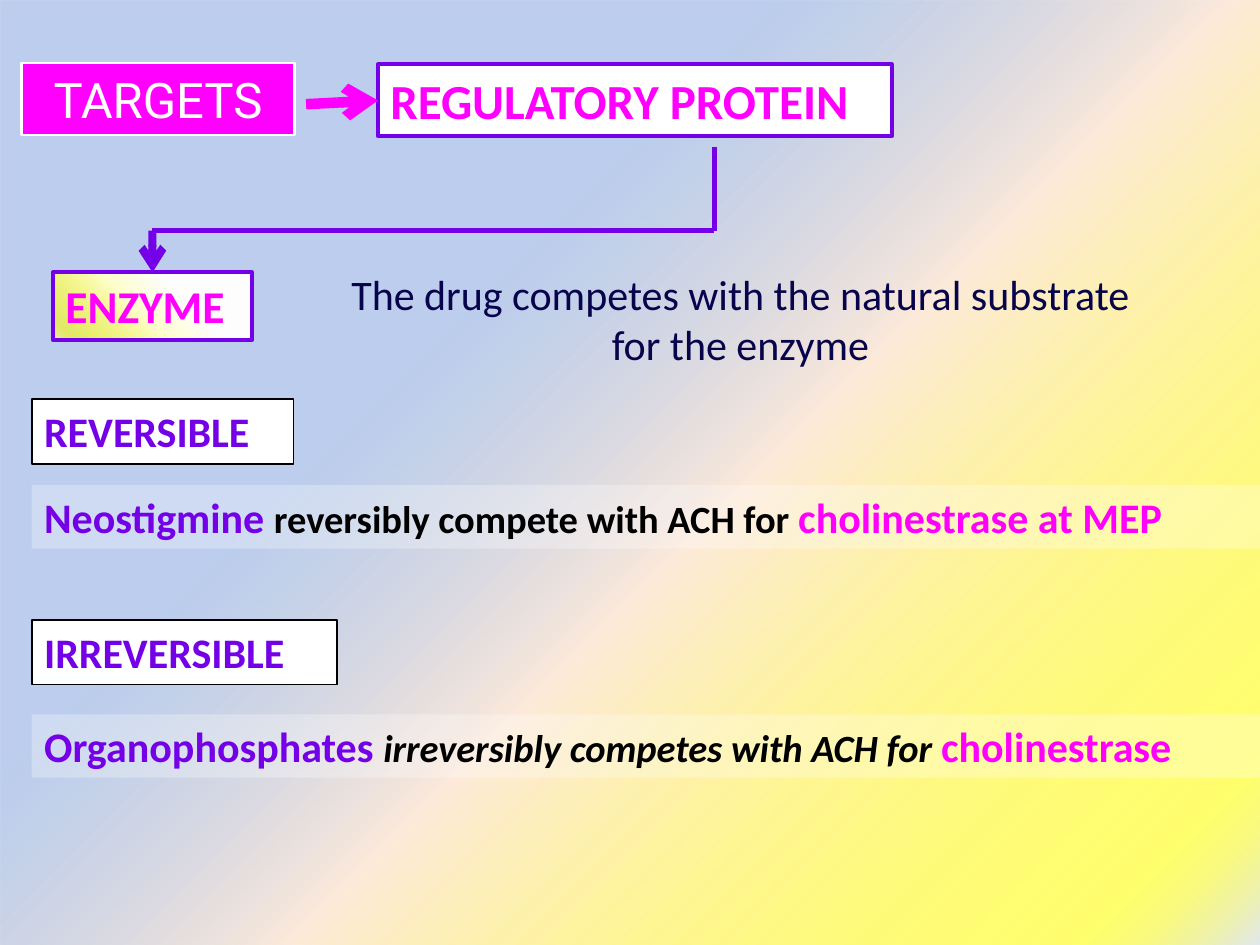
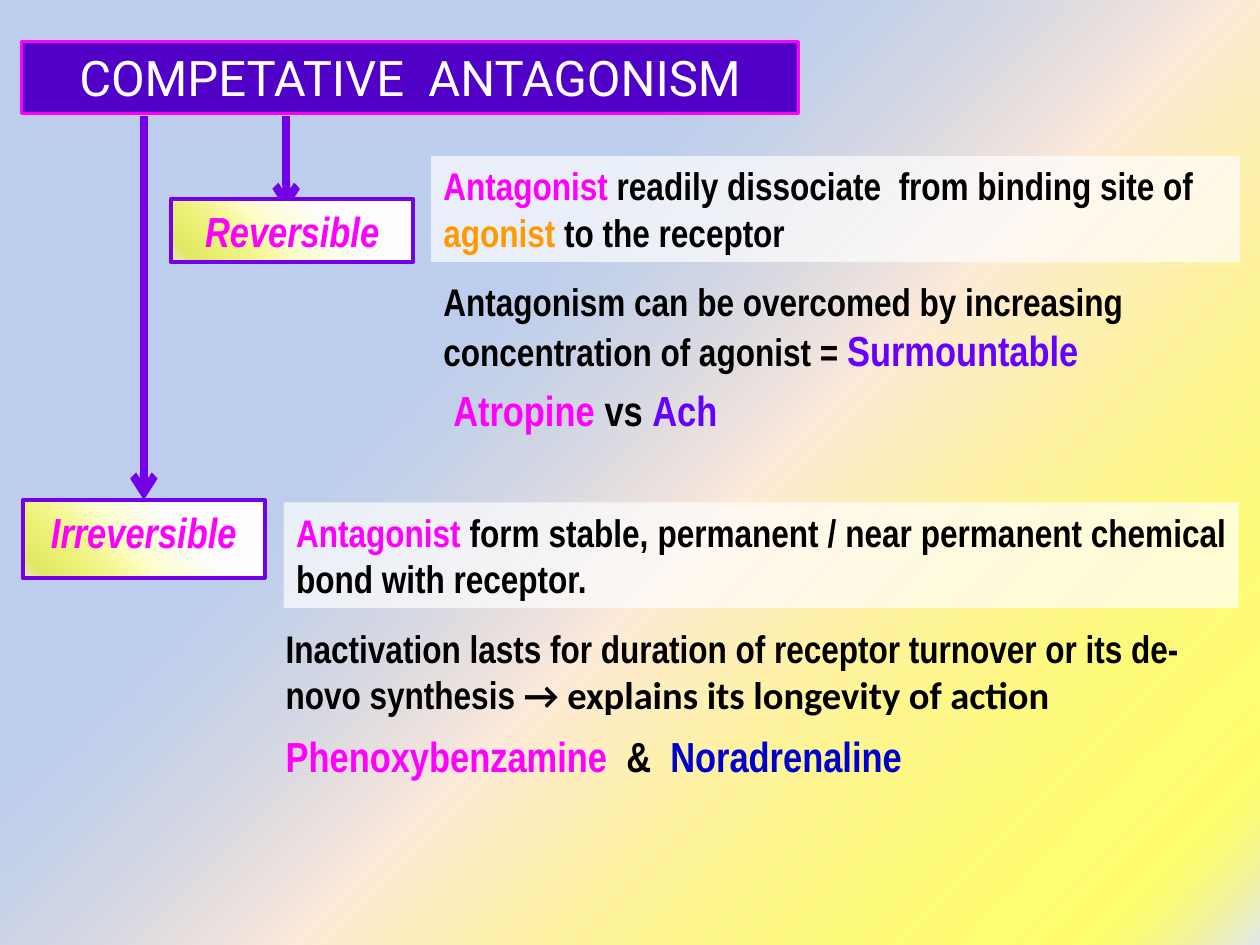
from dataclasses import dataclass
from typing import NamedTuple, Optional

from lxml import etree
from pptx import Presentation
from pptx.dml.color import RGBColor
from pptx.enum.shapes import MSO_CONNECTOR, MSO_SHAPE
from pptx.enum.text import MSO_ANCHOR, MSO_AUTO_SIZE, PP_ALIGN
from pptx.oxml.ns import qn
from pptx.util import Cm, Pt

RECT = MSO_SHAPE.RECTANGLE
STRAIGHT = MSO_CONNECTOR.STRAIGHT
TOP = MSO_ANCHOR.TOP
GROW = MSO_AUTO_SIZE.SHAPE_TO_FIT_TEXT
LEFT, CENTER, JUSTIFY = PP_ALIGN.LEFT, PP_ALIGN.CENTER, PP_ALIGN.JUSTIFY
TOP_SIDE, LEFT_SIDE = 0, 1

# Shared colours and fonts
PINK, VIOLET, INDIGO = "FF00FF", "7300E6", "6600FF"
WHITE, BLACK = "FFFFFF", "000000"
SANS, NARROW, TITLE = "Calibri", "Arial Narrow", "Roboto"
WIDE, HIGH = 25.4, 19.05


class Stop(NamedTuple):
    pos: int
    color: str
    alpha: int = 100


class Fade(NamedTuple):
    stops: list[Stop]
    angle: int


class Run(NamedTuple):
    text: str
    color: str = BLACK
    size: Optional[int] = None
    font: Optional[str] = None
    italic: bool = False


@dataclass(frozen=True)
class Look:
    fill: Optional[str] = None
    alpha: int = 100
    fade: Optional[Fade] = None
    line: Optional[str] = None
    weight: float = 0


@dataclass(frozen=True)
class Type:
    font: str
    size: int
    bold: bool = True
    italic: bool = False
    align: PP_ALIGN = LEFT


class Box(NamedTuple):
    left: float
    top: float
    width: float
    height: float
    look: Look
    type: Type
    paras: list[list[Run]]
    wrap: bool = True


TAIL = [Stop(92, "FFFF00", 56), Stop(100, "E1E8F5")]
SKY = Fade([Stop(35, "9AB5E4", 66), Stop(56, "FDEADA"), *TAIL], 45)
GLOW = Fade([Stop(35, WHITE), Stop(57, "FFFFCC"), *TAIL], 135)

# Looks of the boxes
PLAIN = Look()
LABEL = Look(fade=GLOW, line=VIOLET, weight=2.25)
CARD = Look(fill=WHITE, line=BLACK, weight=1)
BAND = Look(fill=WHITE, alpha=29)
PANEL = Look(fill=WHITE, alpha=68)

# Type styles
HEAD = Type(TITLE, 28, bold=False, align=CENTER)
KIND = Type(SANS, 24)
TAG = Type(NARROW, 24, italic=True, align=CENTER)
BODY = Type(NARROW, 22)
PAIR = Type(NARROW, 24)


def rgb(color: str) -> RGBColor:
    return RGBColor.from_string(color)


def add_alpha(node, alpha: int) -> None:
    if alpha < 100:
        etree.SubElement(node, qn("a:alpha"), val=str(alpha * 1000))


def set_fade(shape, fade: Fade) -> None:
    """Replace the empty fill with a linear gradient."""
    shape.fill.background()
    grad = etree.Element(qn("a:gradFill"), rotWithShape="1")
    stops = etree.SubElement(grad, qn("a:gsLst"))
    for stop in fade.stops:
        node = etree.SubElement(stops, qn("a:gs"), pos=str(stop.pos * 1000))
        tint = etree.SubElement(node, qn("a:srgbClr"), val=stop.color)
        add_alpha(tint, stop.alpha)
    etree.SubElement(grad, qn("a:lin"), ang=str(fade.angle * 60000), scaled="0")
    props = shape.element.spPr
    props.replace(props.find(qn("a:noFill")), grad)


def set_look(shape, look: Look) -> None:
    shape.shadow.inherit = False
    if look.fade:
        set_fade(shape, look.fade)
    else:
        shape.fill.solid()
        shape.fill.fore_color.rgb = rgb(look.fill)
        fill = shape.element.spPr.find(qn("a:solidFill"))
        add_alpha(fill[0], look.alpha)
    if look.line:
        shape.line.color.rgb = rgb(look.line)
        shape.line.width = Pt(look.weight)
    else:
        shape.line.fill.background()


def set_para(para, kind: Type, runs: list[Run]) -> None:
    """Put what the runs share on the paragraph, the rest on each run."""
    para.alignment = kind.align
    para.font.name = kind.font
    para.font.size = Pt(kind.size)
    para.font.bold = kind.bold
    para.font.italic = kind.italic
    same = len({run.color for run in runs}) == 1
    if same:
        para.font.color.rgb = rgb(runs[0].color)
    for run in runs:
        part = para.add_run()
        part.text = run.text
        if not same:
            part.font.color.rgb = rgb(run.color)
        if run.size:
            part.font.size = Pt(run.size)
        if run.font:
            part.font.name = run.font
        if run.italic:
            part.font.italic = True


def add_box(slide, box: Box):
    area = [Cm(box.left), Cm(box.top), Cm(box.width), Cm(box.height)]
    if box.look is PLAIN:
        shape = slide.shapes.add_textbox(*area)
    else:
        shape = slide.shapes.add_shape(RECT, *area)
        set_look(shape, box.look)
    frame = shape.text_frame
    frame.word_wrap = box.wrap
    frame.auto_size = GROW
    frame.vertical_anchor = TOP
    for spot, runs in enumerate(box.paras):
        para = frame.add_paragraph() if spot else frame.paragraphs[0]
        set_para(para, box.type, runs)
    return shape


def add_line(slide, start: tuple[float, float], end: tuple[float, float],
             weight: float, color: str = VIOLET, arrow: bool = False):
    line = slide.shapes.add_connector(
        STRAIGHT, *(Cm(value) for value in (*start, *end)))
    line.line.color.rgb = rgb(color)
    line.line.width = Pt(weight)
    props = line.element.spPr
    if arrow:
        etree.SubElement(props.find(qn("a:ln")), qn("a:tailEnd"), type="arrow")
    etree.SubElement(props, qn("a:effectLst"))
    return line


def add_slide(deck):
    """Blank slide under the shared gradient."""
    slide = deck.slides.add_slide(deck.slide_layouts[6])
    sky = slide.shapes.add_shape(RECT, 0, 0, Cm(WIDE), Cm(HIGH))
    set_look(sky, Look(fade=SKY))
    return slide


def draw_targets(deck) -> None:
    slide = add_slide(deck)

    # Heading boxes and the arrow between them
    add_box(slide, Box(0.43, 1.27, 5.51, 1.45,
                       Look(fill=PINK, line=WHITE, weight=1.5), HEAD,
                       [[Run("TARGETS", WHITE)]]))
    protein = add_box(slide, Box(7.62, 1.3, 10.36, 1.45,
                                 Look(fill=WHITE, line=VIOLET, weight=2.25),
                                 Type(SANS, 28),
                                 [[Run("REGULATORY PROTEIN", PINK)]]))
    link = add_line(slide, (6.17, 2.1), (7.62, 2.03), 6, PINK, True)
    link.end_connect(protein, LEFT_SIDE)

    # Path down to the enzyme
    enzyme = add_box(slide, Box(1.07, 5.49, 4.01, 1.37, LABEL, Type(SANS, 26),
                                [[Run("ENZYME", PINK)]]))
    near, far, bend = 3.07, 14.4, 4.65
    add_line(slide, (far, 2.97), (far, bend), 3)
    add_line(slide, (near, bend), (far, bend), 3)
    drop = add_line(slide, (near, bend), (near, 5.49), 4.5, arrow=True)
    drop.end_connect(enzyme, TOP_SIDE)
    navy = "07044C"
    add_box(slide, Box(5.92, 5.28, 18.21, 2.31, PLAIN,
                       Type(SANS, 24, bold=False, align=CENTER),
                       [[Run("The drug competes with the natural substrate ", navy)],
                        [Run("for the enzyme ", navy)]]))

    # Two kinds of competition, each with an example
    left = 0.64
    for top, width, name, low, runs in (
        (8.05, 5.28, "REVERSIBLE", 9.78,
         [Run("Neostigmine ", VIOLET),
          Run("reversibly compete with ACH for ", size=22),
          Run("cholinestrase at MEP", PINK)]),
        (12.5, 6.15, "IRREVERSIBLE", 14.4,
         [Run("Organophosphates ", VIOLET),
          Run("irreversibly competes with ACH for ", size=22, italic=True),
          Run("cholinestrase", PINK)]),
    ):
        add_box(slide, Box(left, top, width, 1.3, CARD, KIND,
                           [[Run(name, VIOLET)]]))
        add_box(slide, Box(left, low, WIDE - left, 1.28, BAND, KIND, [runs]))


def draw_rivals(deck) -> None:
    slide = add_slide(deck)

    # Title and the arrows below it
    base = 2.34
    add_line(slide, (5.77, base), (5.77, 4.24), 4.5, arrow=True)
    add_box(slide, Box(3.45, 4.01, 4.88, 1.27, LABEL, TAG,
                       [[Run("Reversible", PINK)]]))
    lasting = add_box(slide, Box(0.46, 10.08, 4.88, 1.57, LABEL, TAG,
                                 [[Run("Irreversible", PINK)]]))
    drop = add_line(slide, (2.9, base), (2.9, 10.08), 4.5, arrow=True)
    drop.end_connect(lasting, TOP_SIDE)
    add_box(slide, Box(0.43, 0.84, 15.67, 1.45,
                       Look(fill="5100C8", line=PINK, weight=1.5), HEAD,
                       [[Run("COMPETATIVE  ANTAGONISM", WHITE)]]))

    # Reversible and irreversible explanations
    for box in (
        Box(8.69, 3.15, 16.31, 2.13, PANEL, BODY,
            [[Run("Antagonist", PINK),
              Run(" readily dissociate  from binding site of "),
              Run("agonist", "FF9900"), Run(" to the receptor")]]),
        Box(8.69, 5.49, 16.08, 2.24, PLAIN, BODY,
            [[Run("Antagonism can be overcomed by increasing "
                  "concentration of agonist = "),
              Run("Surmountable", INDIGO, 24)]]),
        Box(8.89, 7.62, 9.96, 1.27, PLAIN, PAIR,
            [[Run("Atropine ", PINK), Run("vs "), Run("Ach", INDIGO)]]),
        Box(5.72, 10.13, 19.25, 2.13, PANEL, Type(NARROW, 22, align=JUSTIFY),
            [[Run("Antagonist", PINK),
              Run(" form stable, permanent / near permanent chemical "
                  "bond with receptor. ")]]),
        Box(5.51, 12.47, 19.69, 2.13, PLAIN, BODY,
            [[Run("Inactivation lasts for duration of receptor turnover "
                  "or its de- novo synthesis "),
              Run("→ explains its longevity of action", font=SANS)]]),
        Box(5.51, 14.6, 13.08, 1.27, PLAIN, PAIR,
            [[Run("Phenoxybenzamine", PINK), Run("  &  "),
              Run("Noradrenaline", "0000CC")]], wrap=False),
    ):
        add_box(slide, box)


def main() -> None:
    deck = Presentation()
    deck.slide_width, deck.slide_height = Cm(WIDE), Cm(HIGH)
    draw_targets(deck)
    draw_rivals(deck)
    deck.save("out.pptx")


if __name__ == "__main__":
    main()
